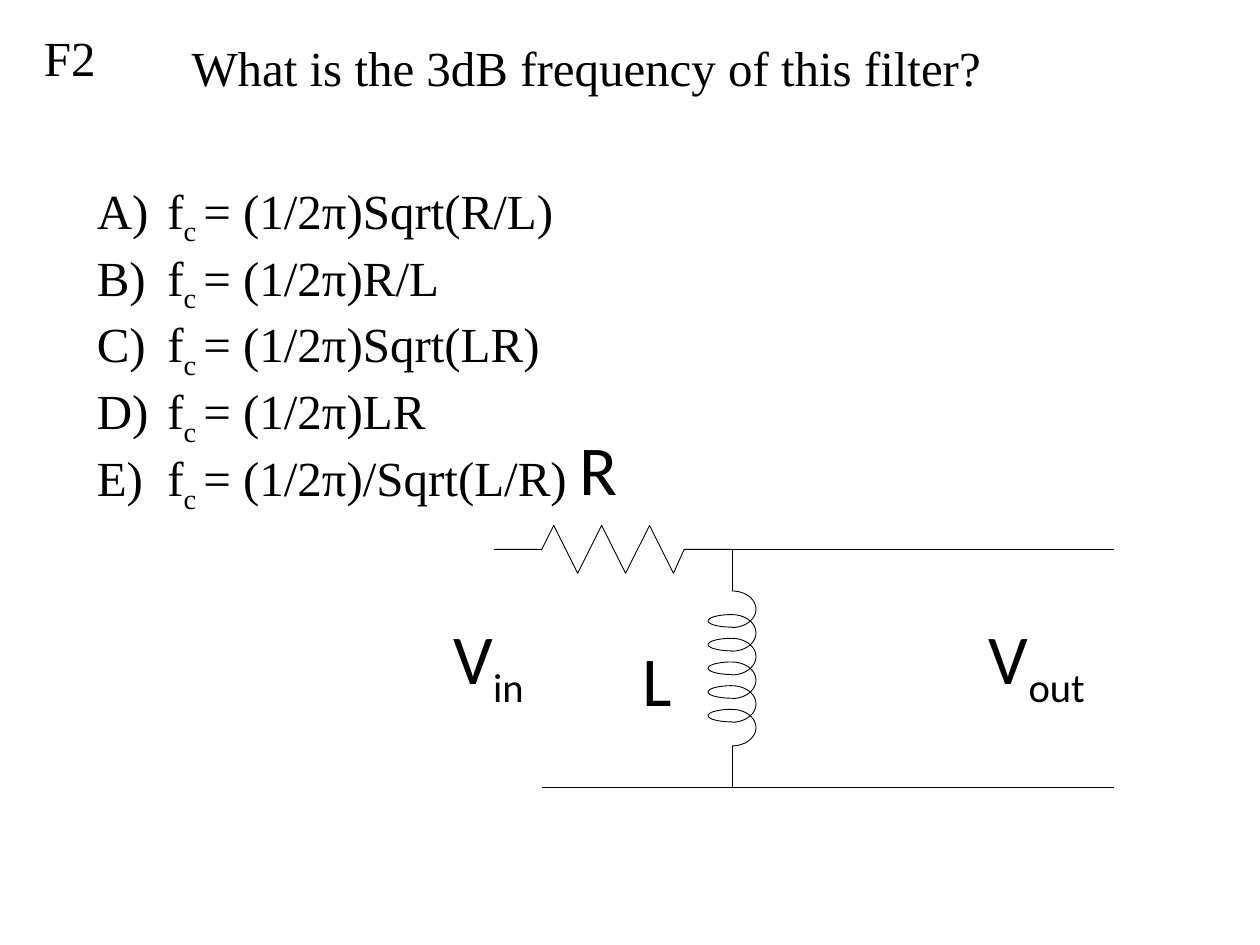
from math import cos, pi, sin
from lxml.etree import SubElement
from pptx import Presentation
from pptx.dml.color import RGBColor
from pptx.enum.shapes import MSO_CONNECTOR
from pptx.enum.text import MSO_ANCHOR, PP_ALIGN
from pptx.oxml.ns import qn
from pptx.util import Inches, Pt

INK = "000000"
SERIF, SANS = "Times New Roman", "Calibri"
TITLE = "What is the 3dB frequency of this filter?"
ANSWERS = ["Sqrt(R/L)", "R/L", "Sqrt(LR)", "LR", "/Sqrt(L/R)"]
LABELS = [
    ("R", "", 4.5, 3.33, 0.51),
    ("L", "", 5, 5, 0.44),
    ("V", "out", 7.75, 4.83, 1.01),
    ("V", "in", 3.5, 4.83, 0.8),
]
LEFT, NODE, MID, RIGHT = 4.3, 5.81, 7.33, 8.84
TOP, BASE = 4.36, 6.25
WIRES = [(TOP, [NODE, MID, RIGHT]), (BASE, [LEFT, NODE, MID, RIGHT])]
COIL, END, TURNS = 4.69, 5.92, 6
REACH, LOOP, EYE = 0.19, 0.29, 0.1
PITCH = (END - COIL - LOOP) / (TURNS - 1)


def color(code):
    return RGBColor.from_string(code)


def style(para, face, size):
    para.font.name = face
    para.font.size = Pt(size)
    para.font.color.rgb = color(INK)


def sub(para, text):
    run = para.add_run()
    run.text = text
    run.font._element.set("baseline", "-25000")


def textbox(shapes, left, top, width, height, wrap=False):
    box = shapes.add_textbox(*map(Inches, (left, top, width, height)))
    box.text_frame.word_wrap = wrap
    return box.text_frame


def wire(shapes, start, end, width):
    line = shapes.add_connector(MSO_CONNECTOR.STRAIGHT, *map(Inches, start + end))
    line.line.color.rgb = color(INK)
    line.line.width = Pt(width)
    SubElement(line._element.spPr, qn("a:effectLst"))


def trace(shapes, points):
    spots = [(Inches(x), Inches(y)) for x, y in points]
    pen = shapes.build_freeform(*spots[0])
    pen.add_line_segments(spots[1:], close=False)
    shape = pen.convert_to_shape()
    shape.fill.background()
    shape.line.color.rgb = color(INK)
    shape.line.width = Pt(0.5)
    shape.shadow.inherit = False


def bow(shapes, top, height, side):
    turns = [pi * step / 24 for step in range(25)]
    trace(shapes, [(NODE + side * REACH * sin(t), top + height * (1 - cos(t)) / 2)
                   for t in turns])


def head(shapes):
    title = shapes.title
    title.left, title.top, title.width, title.height = map(Inches, (1.42, 0.25, 8.16, 0.57))
    frame = title.text_frame
    frame.text = TITLE
    frame.vertical_anchor = MSO_ANCHOR.TOP
    frame.paragraphs[0].alignment = PP_ALIGN.LEFT
    style(frame.paragraphs[0], SERIF, 28)
    mark = textbox(shapes, 0.25, 0.17, 0.64, 0.57).paragraphs[0]
    mark.text = "F2"
    style(mark, SERIF, 28)


def answers(shapes):
    frame = textbox(shapes, 0.67, 1.38, 9, 4.18, True)
    for i, answer in enumerate(ANSWERS):
        para = frame.paragraphs[0] if i == 0 else frame.add_paragraph()
        style(para, SERIF, 28)
        para.add_run().text = "f"
        sub(para, "c ")
        para.add_run().text = "= (1/2π)" + answer
        props = para._p.get_or_add_pPr()
        props.set("marL", str(Inches(0.56)))
        props.set("indent", str(-Inches(0.56)))
        bullet = props.makeelement(qn("a:buAutoNum"), {"type": "alphaUcParenR"})
        props.find(qn("a:defRPr")).addprevious(bullet)


def circuit(shapes):
    peaks = [(LEFT + 0.095 + 0.19 * i, TOP + (0.19 if i % 2 else -0.19)) for i in range(6)]
    trace(shapes, [(3.92, TOP), (LEFT, TOP), *peaks, (5.43, TOP), (NODE, TOP)])
    coil = shapes.add_group_shape().shapes
    wire(coil, (NODE, COIL), (NODE, TOP), 0.5)
    wire(coil, (NODE, BASE), (NODE, END), 0.5)
    for i in range(TURNS):
        top = COIL + PITCH * i
        bow(coil, top, LOOP, 1)
        if i:
            bow(coil, top, EYE, -1)
    for y, stops in WIRES:
        for start, end in zip(stops, stops[1:]):
            wire(shapes, (start, y), (end, y), 0.75)
    for text, low, left, top, width in LABELS:
        para = textbox(shapes, left, top, width, 0.77).paragraphs[0]
        style(para, SANS, 40)
        para.add_run().text = text
        if low:
            sub(para, low)


def main():
    """Build the filter question slide."""
    deck = Presentation()
    deck.slide_width, deck.slide_height = Inches(10), Inches(7.5)
    shapes = deck.slides.add_slide(deck.slide_layouts[5]).shapes
    head(shapes)
    answers(shapes)
    circuit(shapes)
    deck.save("out.pptx")


if __name__ == "__main__":
    main()
